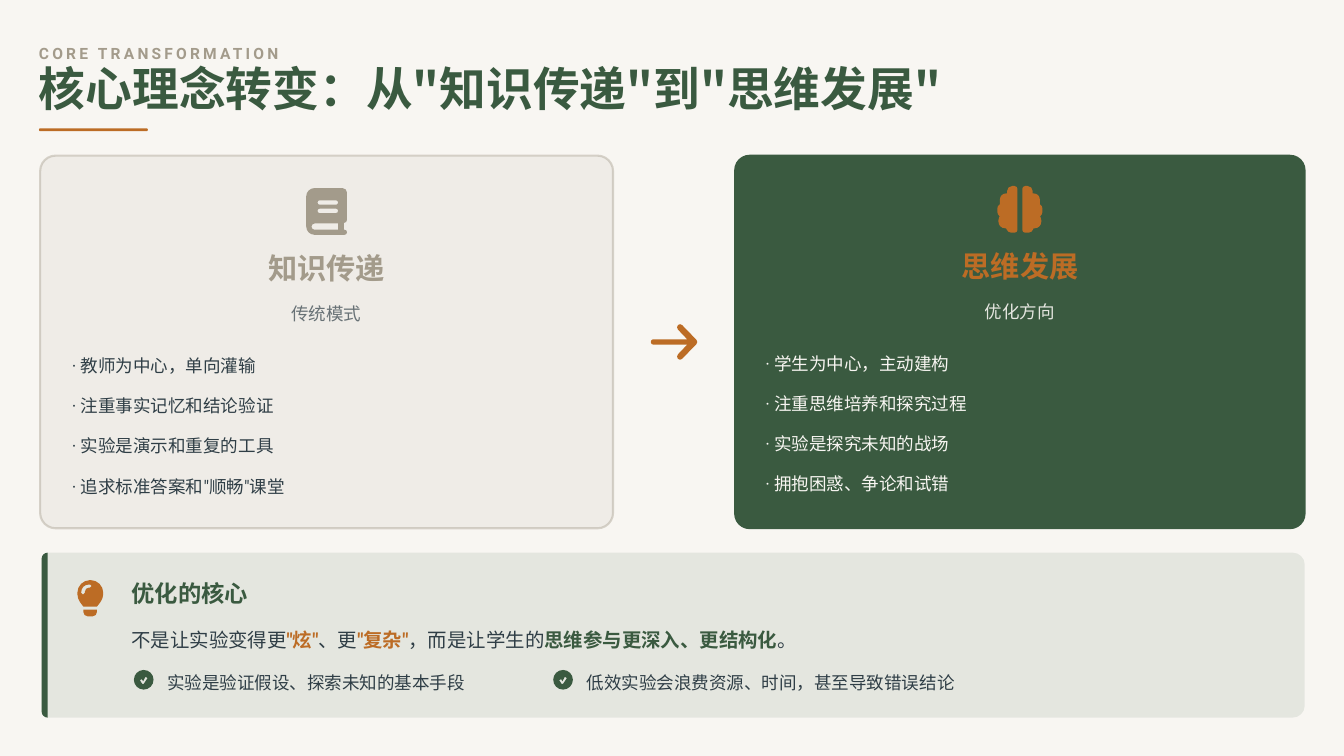
from dataclasses import dataclass
from math import dist

from lxml.etree import SubElement
from pptx import Presentation
from pptx.dml.color import RGBColor
from pptx.enum.shapes import MSO_SHAPE
from pptx.enum.text import MSO_ANCHOR, PP_ALIGN
from pptx.oxml.ns import qn
from pptx.util import Cm, Pt


@dataclass(frozen=True)
class Theme:
    paper: str = "F8F6F2"
    green: str = "3A5A40"
    orange: str = "BC6C25"
    stone: str = "A39B8B"
    ink: str = "2F3E46"
    heading: str = "Noto Sans CJK SC"
    body: str = "Roboto"
    label: float = 14.8
    title: float = 44.5
    card: float = 27.8
    panel: float = 22.2
    lead: float = 18.5
    small: float = 16.7


theme = Theme()


def paint(fill, color, alpha=100):
    fill.solid()
    fill.fore_color.rgb = RGBColor.from_string(color)
    if alpha < 100:
        node = fill._xPr.find(qn("a:solidFill"))[0]
        SubElement(node, qn("a:alpha")).set("val", str(alpha * 1000))


def write(text, left, top, width, height, size=theme.small, font=theme.body, color=theme.ink,
          bold=False, alpha=100, align=PP_ALIGN.LEFT, leading=None, tracking=0):
    box = page.shapes.add_textbox(Cm(left), Cm(top), Cm(width), Cm(height))
    frame = box.text_frame
    frame.word_wrap = True
    frame.vertical_anchor = MSO_ANCHOR.MIDDLE
    frame.margin_left = frame.margin_right = frame.margin_top = frame.margin_bottom = 0
    para = frame.paragraphs[0]
    para.alignment = align
    para.line_spacing = leading
    pieces = [(text, color, bold)] if isinstance(text, str) else text
    for words, tint, heavy in pieces:
        span = para.add_run()
        span.text = words
        span.font.size = Pt(size)
        span.font.bold = heavy
        span.font.name = font
        paint(span.font.fill, tint, alpha)
        properties = span.font._element
        SubElement(properties, qn("a:ea")).set("typeface", theme.heading)
        if tracking:
            properties.set("spc", str(round(tracking * 100)))


deck = Presentation()
deck.slide_width = Cm(45.16)
deck.slide_height = Cm(25.4)
page = deck.slides.add_slide(deck.slide_layouts[6])
paint(page.background.fill, theme.paper)

rounded_boxes = [
    (1.31, 4.31, 3.66, 0.1, 0.05, theme.orange, 100, False),
    (1.35, 5.23, 19.25, 12.52, 0.52, theme.stone, 10, True),
    (24.67, 5.2, 19.2, 12.58, 0.52, theme.green, 100, False),
]
for left, top, width, height, radius, color, alpha, outlined in rounded_boxes:
    card = page.shapes.add_shape(
        MSO_SHAPE.ROUNDED_RECTANGLE, Cm(left), Cm(top), Cm(width), Cm(height))
    card.adjustments[0] = radius / height
    card.shadow.inherit = False
    paint(card.fill, color, alpha)
    if outlined:
        card.line.width = Pt(2)
        paint(card.line.fill, color, 40)
    else:
        card.line.fill.background()

panel = [[(0, 0, 0.2), (42.44, 0, 0.4), (42.44, 5.54, 0.4), (0, 5.54, 0.2)]]
accent = [[(0, 0, 0.2), (0.2, 0, 0), (0.2, 5.54, 0), (0, 5.54, 0.2)]]
book = [
    [(0, 0, 0.28), (1.37, 0, 0.15), (1.37, 1.17, 0.1), (1.27, 1.17, 0), (1.27, 1.4, 0),
     (1.37, 1.4, 0.08), (1.37, 1.57, 0.08), (0, 1.57, 0.28)],
    [(0.18, 1.19, 0.1), (1.07, 1.19, 0), (1.07, 1.4, 0), (0.18, 1.4, 0.1)],
]
for line_top in (0.41, 0.69):
    book.append([(0.38, line_top, 0.07), (1.07, line_top, 0.07),
                 (1.07, line_top + 0.15, 0.07), (0.38, line_top + 0.15, 0.07)])
arrow = [[(0, 0.69, 0.08), (1.22, 0.69, 0), (0.84, 0.29, 0.1), (0.98, 0.14, 0.1),
          (1.6, 0.78, 0.1), (0.98, 1.42, 0.1), (0.84, 1.27, 0.1), (1.22, 0.87, 0),
          (0, 0.87, 0.08)]]
lobes = [(0.08, 0, 0.1), (0.43, 0, 0.17), (0.43, 0.25, 0), (0.67, 0.25, 0.2), (0.67, 0.61, 0),
         (0.76, 0.66, 0.1), (0.76, 0.96, 0.1), (0.68, 1.02, 0), (0.72, 1.1, 0.05),
         (0.72, 1.42, 0.22), (0.46, 1.42, 0), (0.42, 1.57, 0.13), (0.08, 1.57, 0.1)]
brain = [[(side * x, y, radius) for x, y, radius in lobes] for side in (-1, 1)]
bulb = [
    [(0, 0, 0.43), (0.87, 0, 0.43), (0.87, 0.62, 0.15), (0.66, 0.89, 0), (0.2, 0.89, 0),
     (0, 0.62, 0.15)],
    [(0.2, 0.99, 0), (0.66, 0.99, 0), (0.66, 1.22, 0.15), (0.2, 1.22, 0.15)],
    [(0.13, 0.15, 0.25), (0.48, 0.15, 0.05), (0.48, 0.25, 0.05), (0.25, 0.25, 0.15),
     (0.25, 0.48, 0.05), (0.13, 0.48, 0.05)],
]
check = [
    [(0, 0, 0.33), (0.66, 0, 0.33), (0.66, 0.66, 0.33), (0, 0.66, 0.33)],
    [(0.2, 0.34, 0), (0.27, 0.31, 0), (0.31, 0.38, 0), (0.39, 0.23, 0),
     (0.46, 0.27, 0), (0.33, 0.47, 0), (0.28, 0.47, 0)],
]
outlines = [
    (panel, 1.4, 18.57, theme.green, 10),
    (accent, 1.4, 18.57, theme.green, 100),
    (book, 10.29, 6.32, theme.stone, 100),
    (arrow, 21.87, 10.71, theme.orange, 100),
    (brain, 34.27, 6.25, theme.orange, 100),
    (bulb, 2.6, 19.49, theme.orange, 100),
    (check, 4.5, 22.51, theme.green, 100),
    (check, 18.59, 22.51, theme.green, 100),
]
for contours, left, top, color, alpha in outlines:
    builder = None
    curves = []
    total = 0
    for corners in contours:
        points = []
        for index, (x, y, radius) in enumerate(corners):
            if not radius:
                points.append((Cm(left + x), Cm(top + y)))
                continue
            before, after = corners[index - 1], corners[(index + 1) % len(corners)]
            curves.append(total + len(points) + 1)
            for near, pull in ((before, 1), (before, 0.45), (after, 0.45), (after, 1)):
                share = pull * radius / dist((x, y), near[:2])
                points.append((Cm(left + x + (near[0] - x) * share),
                               Cm(top + y + (near[1] - y) * share)))
        total += len(points)
        if builder is None:
            builder = page.shapes.build_freeform(*points[0], scale=1.0)
        else:
            builder.move_to(*points[0])
        builder.add_line_segments(points[1:], close=True)
    shape = builder.convert_to_shape()
    nodes = list(shape._element.iter(qn("a:moveTo"), qn("a:lnTo")))
    for start in curves:
        curve, second, end = nodes[start:start + 3]
        curve.tag = qn("a:cubicBezTo")
        for node in (second, end):
            curve.append(node[0])
            node.getparent().remove(node)
    shape.shadow.inherit = False
    paint(shape.fill, color, alpha)
    shape.line.fill.background()

write("CORE TRANSFORMATION", 1.31, 1.3, 42.8, 0.79, size=theme.label, color=theme.stone,
      bold=True, leading=1.3, tracking=3.1)
write('核心理念转变：从"知识传递"到"思维发展"', 1.31, 2.34, 43.33, 1.57, size=theme.title,
      font=theme.heading, color=theme.green, bold=True, leading=0.8)

cards = [
    (2.18, 8.4, "知识传递", theme.stone, "传统模式", theme.ink, 70,
     ["教师为中心，单向灌输", "注重事实记忆和结论验证", "实验是演示和重复的工具",
      '追求标准答案和"顺畅"课堂']),
    (25.48, 8.33, "思维发展", theme.orange, "优化方向", theme.paper, 90,
     ["学生为中心，主动建构", "注重思维培养和探究过程", "实验是探究未知的战场",
      "拥抱困惑、争论和试错"]),
]
for left, top, name, accent_color, mode, color, alpha, points in cards:
    write(name, left, top, 17.6, 1.17, size=theme.card, font=theme.heading, color=accent_color,
          bold=True, align=PP_ALIGN.CENTER)
    write(mode, left + 0.08, top + 1.57, 17.4, 0.91, color=color, alpha=alpha,
          align=PP_ALIGN.CENTER, leading=1.3)
    for row, point in enumerate(points):
        write("· " + point, left + 0.24, top + 3.27 + row * 1.35, 17.4, 0.94, color=color,
              leading=1.4)

write("优化的核心", 4.42, 19.35, 28.07, 1.04, size=theme.panel, font=theme.heading,
      color=theme.green, bold=True, leading=1.1)
write([("不是让实验变得更", theme.ink, False), ('"炫"', theme.orange, True),
       ("、更", theme.ink, False), ('"复杂"', theme.orange, True),
       ("，而是让学生的", theme.ink, False),
       ("思维参与更深入、更结构化", theme.green, True), ("。", theme.ink, False)],
      4.42, 20.8, 28, 1.07, size=theme.lead, leading=1.4)
write("实验是验证假设、探索未知的基本手段", 5.62, 22.38, 10.6, 0.91, leading=1.3)
write("低效实验会浪费资源、时间，甚至导致错误结论", 19.72, 22.38, 13, 0.91, leading=1.3)

deck.save("out.pptx")
